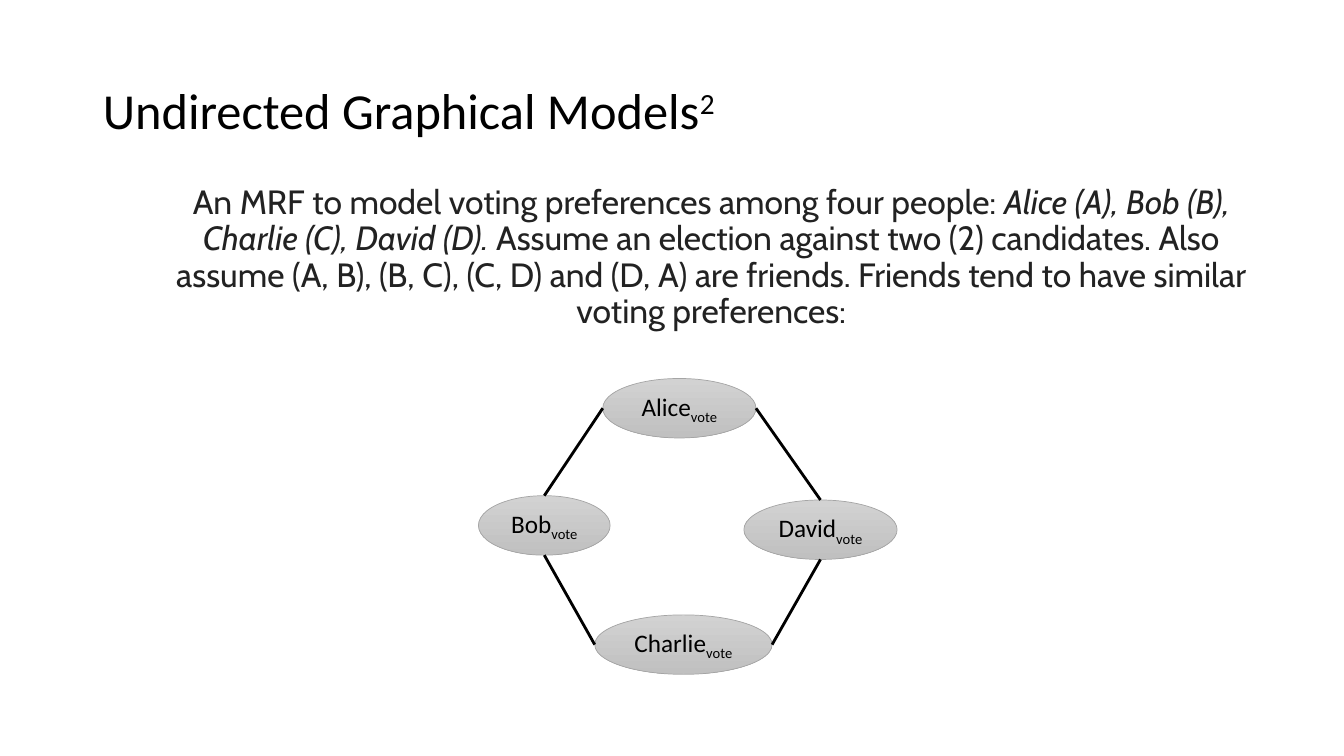
"""Build a slide showing a Markov random field of four friends' votes."""
from lxml.etree import SubElement
from pptx import Presentation
from pptx.dml.color import RGBColor
from pptx.enum.shapes import MSO_CONNECTOR as CONNECTOR, MSO_SHAPE as SHAPE
from pptx.enum.text import MSO_ANCHOR as ANCHOR, MSO_AUTO_SIZE as AUTOSIZE, PP_ALIGN as ALIGN
from pptx.oxml.ns import qn
from pptx.util import Inches, Pt

COLORS = {"ink": "000000", "body": "222222", "outline": "A5A5A5",
          "top": "D2D2D2", "bottom": "C0C0C0"}

deck = Presentation()
deck.slide_width, deck.slide_height = Inches(13.33), Inches(7.5)
COL, ROW = deck.slide_width / 100, deck.slide_height / 100
slide = deck.slides.add_slide(deck.slide_layouts[1])


def place(part, left, top, width, height):
    part.left, part.top = round(left * COL), round(top * ROW)
    part.width, part.height = round(width * COL), round(height * ROW)


def write(paragraph, text, size, font, color, italic=False, baseline=0):
    run = paragraph.add_run()
    run.text = text
    run.font.size, run.font.name, run.font.italic = Pt(size), font, italic
    run.font.color.rgb = RGBColor.from_string(COLORS[color])
    if baseline:
        run.font._element.set("baseline", str(baseline * 1000))


title = slide.shapes.title
place(title, 6.9, 5.33, 86.25, 19.33)
title.text_frame.vertical_anchor = ANCHOR.MIDDLE
title.text_frame.auto_size = AUTOSIZE.NONE
heading = title.text_frame.paragraphs[0]
heading.alignment, heading.line_spacing = ALIGN.LEFT, 0.9
write(heading, "Undirected Graphical Models", 36, "Calibri", "ink")
write(heading, "2", 36, "Calibri", "ink", baseline=30)

body = slide.placeholders[1]
place(body, 6.9, 23.87, 88.3, 70.4)
body.text_frame.auto_size = AUTOSIZE.NONE
premise = body.text_frame.paragraphs[0]
premise.level, premise.alignment = 1, ALIGN.CENTER
premise.line_spacing, premise.space_before = 0.9, Pt(5)
premise_format = premise._p.get_or_add_pPr()
premise_format.set("marL", str(Inches(0.5)))
premise_format.set("indent", "0")
SubElement(premise_format, qn("a:buNone"))
for text, italic in [
    ("An MRF to model voting preferences among four people: ", False),
    ("Alice (A), Bob (B), Charlie (C), David (D). ", True),
    ("Assume an election against two (2) candidates. Also assume (A, B), (B, C), "
     "(C, D) and (D, A) are friends. Friends tend to have similar voting preferences:", False),
]:
    write(premise, text, 24, "Cabin", "body", italic)

VOTER_HEIGHT = 7.87
voters = {}
for name, center_x, center_y, width in [
    ("Alice", 50.55, 54, 11.4),
    ("Bob", 40.5, 69.5, 9.8),
    ("David", 61.05, 70.07, 11.4),
    ("Charlie", 50.85, 85.27, 13.2),
]:
    voter = slide.shapes.add_shape(SHAPE.OVAL, 0, 0, 0, 0)
    place(voter, center_x - width / 2, center_y - VOTER_HEIGHT / 2, width, VOTER_HEIGHT)
    voter.shadow.inherit = False
    voter.fill.gradient()
    voter.fill.gradient_angle = 270
    for stop, shade in zip(voter.fill.gradient_stops, ("top", "bottom")):
        stop.color.rgb = RGBColor.from_string(COLORS[shade])
    voter.line.color.rgb = RGBColor.from_string(COLORS["outline"])
    voter.line.width = Pt(0.5)
    voter.text_frame.word_wrap = False
    voter.text_frame.vertical_anchor = ANCHOR.MIDDLE
    label = voter.text_frame.paragraphs[0]
    label.alignment = ALIGN.CENTER
    write(label, name, 18, "Calibri", "ink")
    write(label, "vote", 18, "Calibri", "ink", baseline=-25)
    voters[name] = voter

SIDES = {"left": (0, 0.5), "right": (1, 0.5), "top": (0.5, 0), "bottom": (0.5, 1)}
for friendship in [
    (("Alice", "left"), ("Bob", "top")),
    (("Alice", "right"), ("David", "top")),
    (("Charlie", "left"), ("Bob", "bottom")),
    (("David", "bottom"), ("Charlie", "right")),
]:
    ends = []
    for name, side in friendship:
        voter, (across, down) = voters[name], SIDES[side]
        ends += [round(voter.left + across * voter.width), round(voter.top + down * voter.height)]
    edge = slide.shapes.add_connector(CONNECTOR.STRAIGHT, *ends)
    edge.line.color.rgb = RGBColor.from_string(COLORS["ink"])
    edge.line.width = Pt(2)
    SubElement(edge._element.spPr, qn("a:effectLst"))

deck.save("out.pptx")
